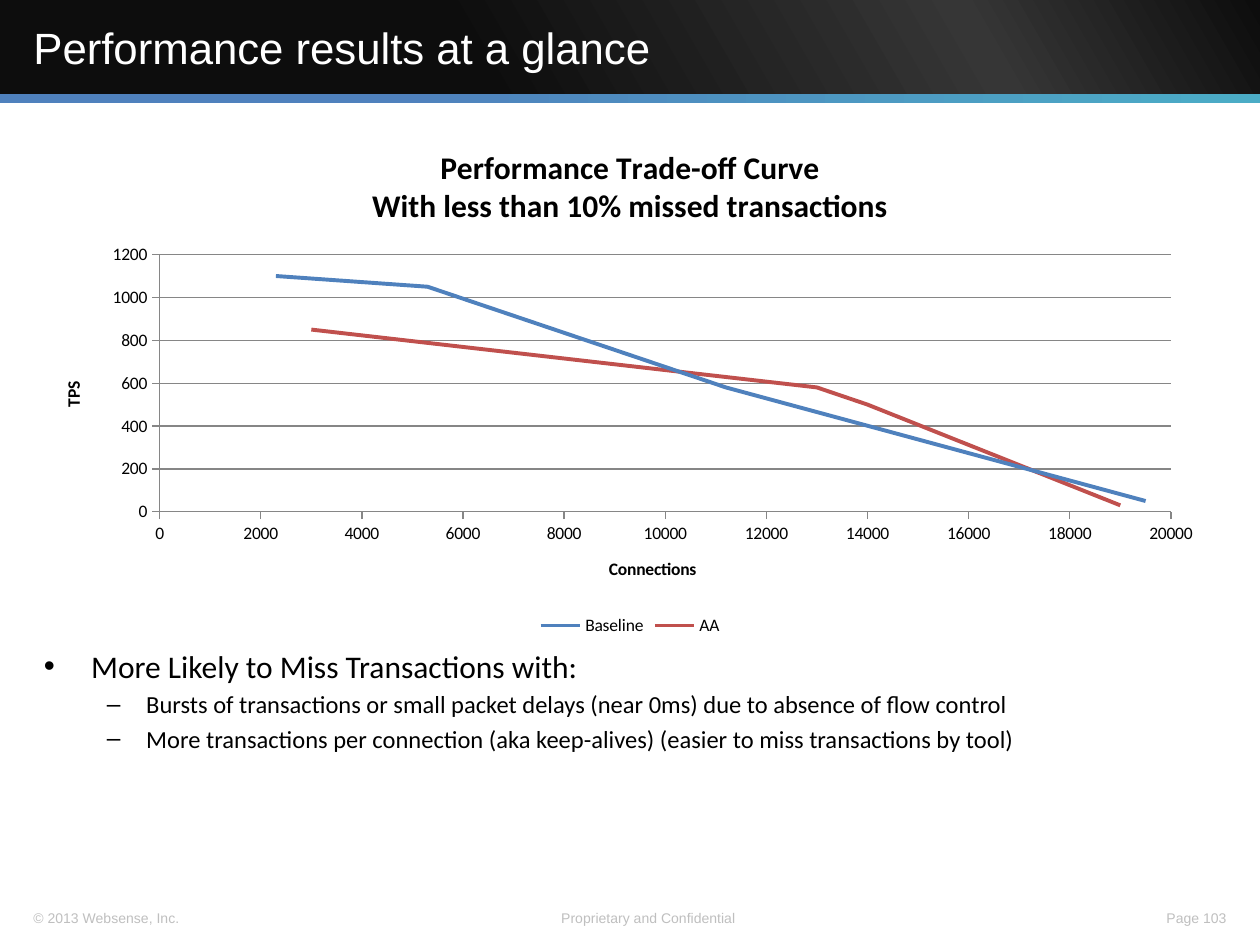
from dataclasses import dataclass

from lxml import etree
from pptx import Presentation
from pptx import util as u
from pptx.chart.data import XyChartData
from pptx.dml.color import RGBColor
from pptx.enum import chart as ch, shapes, text
from pptx.oxml import parse_xml
from pptx.oxml.ns import nsdecls, qn

Pt = u.Pt
ALIGN = text.PP_ALIGN


@dataclass(frozen=True)
class Theme:
    heading: str = "Arial"
    body: str = "Calibri"
    black: str = "000000"
    white: str = "FFFFFF"
    muted: str = "BFBFBF"
    grid: str = "868686"
    dark: str = "0D0D0D"
    sheen: str = "363636"
    blue: str = "4F81BD"
    red: str = "C0504D"
    teal: str = "4BACC6"
    title_size: float = 25
    bullet_size: float = 18
    sub_size: float = 14
    chart_title_size: float = 18
    chart_size: float = 10
    footer_size: float = 8


class Deck:
    def __init__(self, theme):
        self.theme = theme
        self.prs = Presentation()
        self.prs.slide_width, self.prs.slide_height = Pt(720), Pt(540)
        self.s = self.prs.slides.add_slide(self.prs.slide_layouts[6])

    def style(self, font, size, color, name, bold=False):
        font.size, font.name, font.bold = Pt(size), name, bold
        font.color.rgb = RGBColor.from_string(color)

    def textbox(self, box):
        sp = self.s.shapes.add_textbox(*map(Pt, box))
        tf = sp.text_frame
        tf.word_wrap = True
        return tf

    def label(self, words, box, size, color, align=ALIGN.LEFT, anchor=text.MSO_ANCHOR.TOP):
        tf = self.textbox(box)
        tf.text = words
        tf.vertical_anchor = anchor
        p = tf.paragraphs[0]
        p.alignment = align
        self.style(p.runs[0].font, size, color, self.theme.heading)

    def gradient_bar(self, box, stops, angle, flip=False):
        sp = self.s.shapes.add_shape(shapes.MSO_SHAPE.RECTANGLE, *map(Pt, box))
        sp.shadow.inherit = False
        sp.line.fill.background()
        stop_xml = "".join(
            f'<a:gs pos="{pos * 1000}"><a:srgbClr val="{color}"/></a:gs>' for pos, color in stops)
        sp_pr = sp._element.spPr
        sp_pr.find(qn("a:prstGeom")).addnext(parse_xml(
            f'<a:gradFill {nsdecls("a")} rotWithShape="1"><a:gsLst>{stop_xml}</a:gsLst>'
            f'<a:lin ang="{angle * 60000}" scaled="0"/></a:gradFill>'))
        if flip:
            sp_pr.find(qn("a:xfrm")).set("flipV", "1")

    def bullets(self, items, box):
        t = self.theme
        levels = [("•", 27, 27, t.bullet_size), ("–", 58.5, 22.5, t.sub_size)]
        tf = self.textbox(box)
        for i, (level, words) in enumerate(items):
            mark, left, hang, size = levels[level]
            p = tf.add_paragraph() if i else tf.paragraphs[0]
            p.text = words
            p.level = level
            p_pr = p._p.get_or_add_pPr()
            p_pr.set("marL", str(Pt(left)))
            p_pr.set("indent", str(-Pt(hang)))
            etree.SubElement(p_pr, qn("a:buFont")).set("typeface", t.heading)
            etree.SubElement(p_pr, qn("a:buChar")).set("char", mark)
            if i:
                p.space_before = Pt(size * 0.2)
            self.style(p.runs[0].font, size, t.black, t.body)

    def chart_heading(self, owner, words, size):
        tf = (owner.chart_title if hasattr(owner, "chart_title") else owner.axis_title).text_frame
        tf.text = words
        for p in tf.paragraphs:
            self.style(p.runs[0].font, size, self.theme.black, self.theme.body, True)

    def axis(self, axis, words, top, step):
        axis.minimum_scale, axis.maximum_scale, axis.major_unit = 0, top, step
        axis.major_tick_mark = ch.XL_TICK_MARK.OUTSIDE
        axis.format.line.color.rgb = RGBColor.from_string(self.theme.grid)
        self.chart_heading(axis, words, self.theme.chart_size)

    def curve_chart(self, title, series, box, plot):
        t = self.theme
        data = XyChartData()
        for name, _, points in series:
            line = data.add_series(name)
            for x, y in points:
                line.add_data_point(x, y)
        chart = self.s.shapes.add_chart(
            ch.XL_CHART_TYPE.XY_SCATTER_SMOOTH_NO_MARKERS, *map(Pt, box), data).chart
        self.style(chart.font, t.chart_size, t.black, t.body)
        self.chart_heading(chart, title, t.chart_title_size)
        chart.has_legend = True
        chart.legend.position = ch.XL_LEGEND_POSITION.BOTTOM
        chart.legend.include_in_layout = False
        self.axis(chart.category_axis, "Connections", 20000, 2000)
        self.axis(chart.value_axis, "TPS", 1200, 200)
        chart.category_axis.has_major_gridlines = False
        grid = chart.value_axis.major_gridlines.format.line
        grid.color.rgb = RGBColor.from_string(t.grid)
        chart.plots[0].vary_by_categories = False
        for line, (_, color, _) in zip(chart.plots[0].series, series):
            line.smooth = True
            line.marker.style = ch.XL_MARKER_STYLE.NONE
            line.format.line.width = Pt(2.25)
            line.format.line.color.rgb = RGBColor.from_string(color)
        self.place_plot(chart, plot)

    def place_plot(self, chart, plot):
        area = chart._chartSpace.chart.plotArea
        for old in area.findall(qn("c:layout")):
            area.remove(old)
        sizes = "".join(f'<c:{k} val="{v}"/>' for k, v in zip("xywh", plot))
        area.insert(0, parse_xml(
            f'<c:layout {nsdecls("c")}><c:manualLayout><c:layoutTarget val="inner"/>'
            f'<c:xMode val="edge"/><c:yMode val="edge"/>{sizes}</c:manualLayout></c:layout>'))


def main():
    t = Theme()
    deck = Deck(t)
    footers = [
        ("© 2013 Websense, Inc.", 12, 114, ALIGN.LEFT),
        ("Page 103", 636, 72, ALIGN.RIGHT),
        ("Proprietary and Confidential", 303, 135, ALIGN.CENTER),
    ]
    for words, left, width, align in footers:
        deck.label(words, (left, 516, width, 17), t.footer_size, t.muted, align)
    deck.gradient_bar((0, 0, 720, 54), [(0, t.dark), (23, t.sheen), (63, t.dark)], 210, True)
    deck.gradient_bar((0, 54, 720, 5), [(0, t.blue), (31, t.blue), (100, t.teal)], 0)
    deck.label("Performance results at a glance", (12, 0, 594, 54), t.title_size, t.white,
               anchor=text.MSO_ANCHOR.MIDDLE)
    deck.curve_chart(
        "Performance Trade-off Curve\nWith less than 10% missed transactions",
        [("Baseline", t.blue, [(2300, 1100), (5300, 1050), (11200, 580), (19500, 50)]),
         ("AA", t.red, [(3000, 850), (13000, 580), (14000, 500), (19000, 30)])],
        (24, 72, 672, 294), (0.1, 0.25, 0.86, 0.5))
    deck.bullets([
        (0, "More Likely to Miss Transactions with:"),
        (1, "Bursts of transactions or small packet delays (near 0ms) due to absence of flow control"),
        (1, "More transactions per connection (aka keep-alives) (easier to miss transactions by tool)"),
    ], (18, 366, 684, 156))
    deck.prs.save("out.pptx")


if __name__ == "__main__":
    main()
